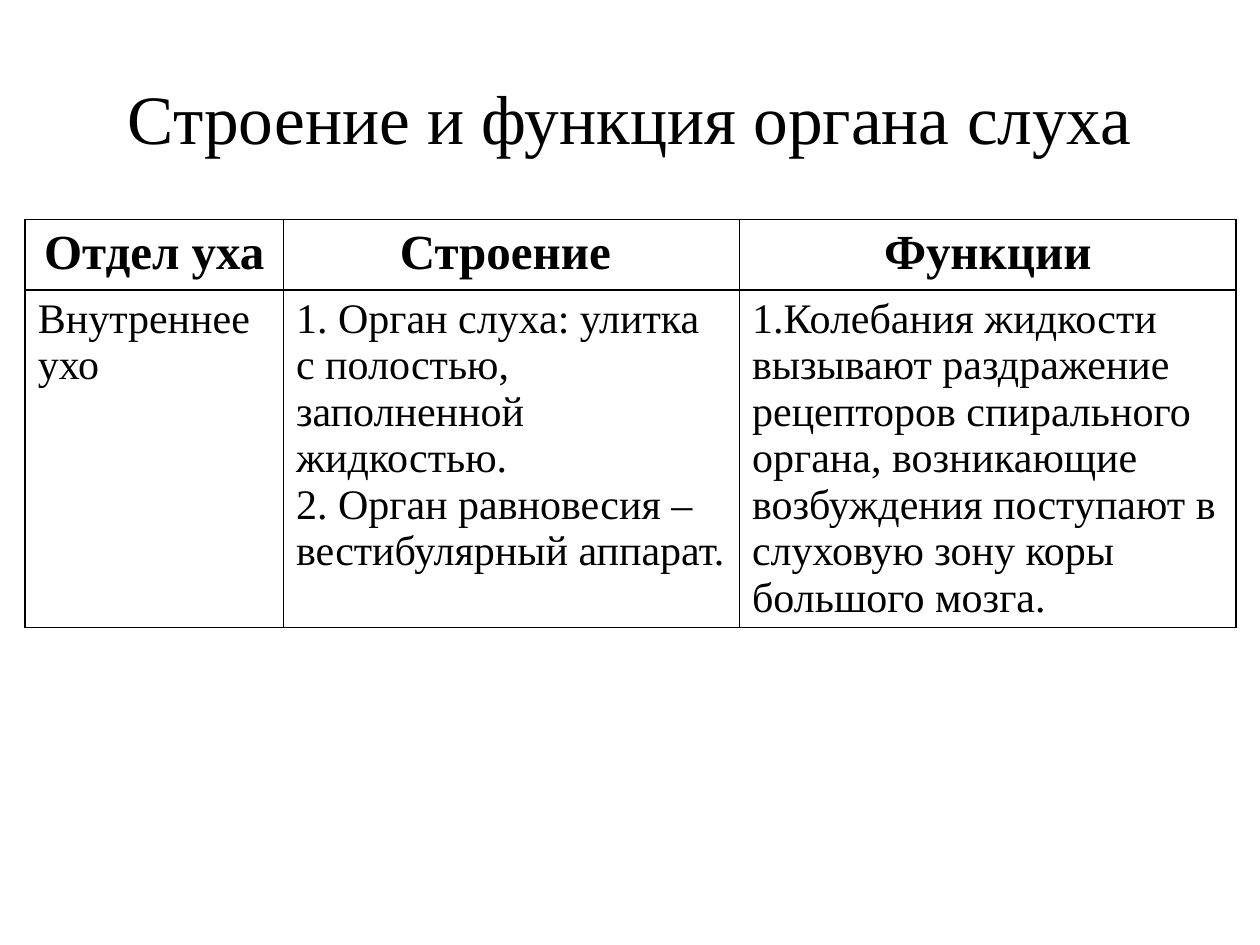
"""Build a slide with a table on the structure and function of the ear."""
from lxml import etree
from pptx import Presentation
from pptx.dml.color import RGBColor
from pptx.enum import text
from pptx.oxml import ns
from pptx.util import Inches, Pt

BLACK = RGBColor(0, 0, 0)
WHITE = RGBColor(255, 255, 255)
FONT = "Times New Roman"
COLUMN_WIDTHS = [2.05, 3.62, 3.94]
ROW_HEIGHTS = [0.56, 2.68]
ROWS = [
    ["Отдел уха", "Строение ", "Функции"],
    [
        "Внутреннее ухо",
        "1. Орган слуха: улитка с полостью, заполненной жидкостью.\v"
        "2. Орган равновесия – вестибулярный аппарат.",
        "1.Колебания жидкости вызывают раздражение рецепторов спирального органа, "
        "возникающие возбуждения поступают в слуховую зону коры большого мозга.",
    ],
]


def format_paragraph(para, size, bold, align):
    para.alignment = align
    para.font.name = FONT
    para.font.size = Pt(size)
    para.font.bold = bold
    para.font.color.rgb = BLACK


def add_borders(cell):
    properties = cell._tc.get_or_add_tcPr()
    for position, side in enumerate(["lnL", "lnR", "lnT", "lnB"]):
        line = etree.Element(ns.qn(f"a:{side}"), w=str(Pt(1)))
        fill = etree.SubElement(line, ns.qn("a:solidFill"))
        etree.SubElement(fill, ns.qn("a:srgbClr"), val=str(BLACK))
        properties.insert(position, line)


deck = Presentation()
deck.slide_width, deck.slide_height = Inches(10), Inches(7.5)
page = deck.slides.add_slide(deck.slide_layouts[5])

title = page.shapes.title
title.left, title.top = Inches(0.5), Inches(0.3)
title.width, title.height = Inches(9), Inches(1.25)
title.text_frame.text = "Строение и функция органа слуха"
title.text_frame.vertical_anchor = text.MSO_ANCHOR.MIDDLE
format_paragraph(title.text_frame.paragraphs[0], 39.6, False, text.PP_ALIGN.CENTER)

table = page.shapes.add_table(
    len(ROWS), len(COLUMN_WIDTHS), Inches(0.2), Inches(1.74),
    Inches(sum(COLUMN_WIDTHS)), Inches(sum(ROW_HEIGHTS))).table
for column, width in zip(table.columns, COLUMN_WIDTHS):
    column.width = Inches(width)
for row, height in zip(table.rows, ROW_HEIGHTS):
    row.height = Inches(height)

styles = [(28, True, text.PP_ALIGN.CENTER), (24, False, text.PP_ALIGN.LEFT)]
for row, wordings, style in zip(table.rows, ROWS, styles):
    for cell, wording in zip(row.cells, wordings):
        cell.text_frame.text = wording
        format_paragraph(cell.text_frame.paragraphs[0], *style)
        cell.fill.solid()
        cell.fill.fore_color.rgb = WHITE
        add_borders(cell)

deck.save("out.pptx")
